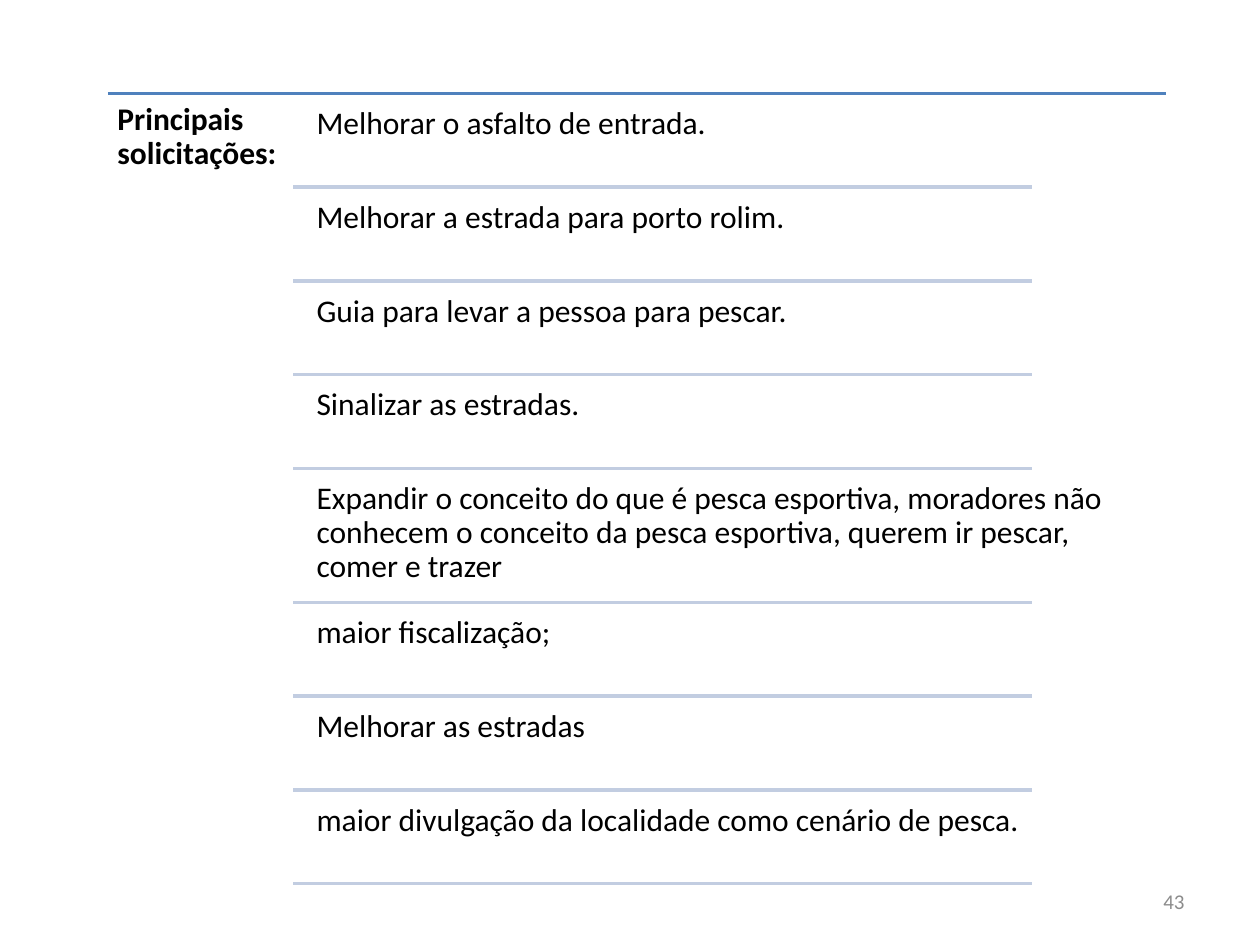
import pptx
import pptx.util
import pptx.dml.color
import pptx.enum.shapes
import pptx.enum.text
import pptx.oxml.ns
from lxml import etree

Pt = pptx.util.Pt
PP_ALIGN = pptx.enum.text.PP_ALIGN
ANCHOR = pptx.enum.text.MSO_ANCHOR

HEADING = "Principais solicitações:"
ROW_W, ROW_H = 414.7, 51.02
WIDE_W, TALL_H = 490.3, 74.05
REQUESTS = [  # text, box width, box height
    ("Melhorar o asfalto de entrada.", ROW_W, ROW_H),
    ("Melhorar a estrada para porto rolim.", ROW_W, ROW_H),
    ("Guia para levar a pessoa para pescar.", ROW_W, ROW_H),
    ("Sinalizar as estradas.", ROW_W, ROW_H),
    ("Expandir o conceito do que é pesca esportiva, moradores não conhecem o "
     "conceito da pesca esportiva, querem ir pescar, comer e trazer", WIDE_W, TALL_H),
    ("maior fiscalização;", ROW_W, ROW_H),
    ("Melhorar as estradas", ROW_W, ROW_H),
    ("maior divulgação da localidade como cenário de pesca.", ROW_W, ROW_H),
]
PAGE_NUMBER = "43"

LEFT, TOP, RIGHT = 61.7, 53.4, 666
RULE_LEFT, RULE_RIGHT = 167.5, 590
TEXT_LEFT = 175.5
GAP = 2.55


def rgb(value):
    return pptx.dml.color.RGBColor.from_string(value)


def add_text(s, text, x, y, w, h, size=18, color="000000", bold=False,
             align=PP_ALIGN.LEFT, anchor=ANCHOR.TOP, inset=5.4, spacing=0.9):
    tf = s.shapes.add_textbox(Pt(x), Pt(y), Pt(w), Pt(h)).text_frame
    tf.word_wrap = True
    tf.vertical_anchor = anchor
    tf.margin_left = tf.margin_right = tf.margin_top = tf.margin_bottom = Pt(inset)
    p = tf.paragraphs[0]
    p.alignment = align
    p.line_spacing = spacing
    r = p.add_run()
    r.text = text
    r.font.name = "Calibri"
    r.font.size = Pt(size)
    r.font.bold = bold
    r.font.color.rgb = rgb(color)


def add_rule(s, x1, x2, y, color):
    line = s.shapes.add_connector(
        pptx.enum.shapes.MSO_CONNECTOR.STRAIGHT, Pt(x1), Pt(y), Pt(x2), Pt(y))
    line.line.color.rgb = rgb(color)
    line.line.width = Pt(2)
    etree.SubElement(line._element.spPr, pptx.oxml.ns.qn("a:effectLst"))


prs = pptx.Presentation()
prs.slide_width, prs.slide_height = Pt(720), Pt(540)
s = prs.slides.add_slide(prs.slide_layouts[6])

add_text(s, PAGE_NUMBER, 516, 500.5, 168, 28.75, size=12, color="8C8C8C",
         align=PP_ALIGN.RIGHT, anchor=ANCHOR.MIDDLE, inset=7.2, spacing=1.0)
add_rule(s, LEFT, RIGHT, TOP, "4F81BD")
add_text(s, HEADING, LEFT, TOP, RULE_LEFT - LEFT, 454.5, bold=True)

y = TOP
for text, w, h in REQUESTS:
    add_text(s, text, TEXT_LEFT, y + GAP, w, h)
    y += GAP + h
    add_rule(s, RULE_LEFT, RULE_RIGHT, y, "C2CDE1")

prs.save("out.pptx")
